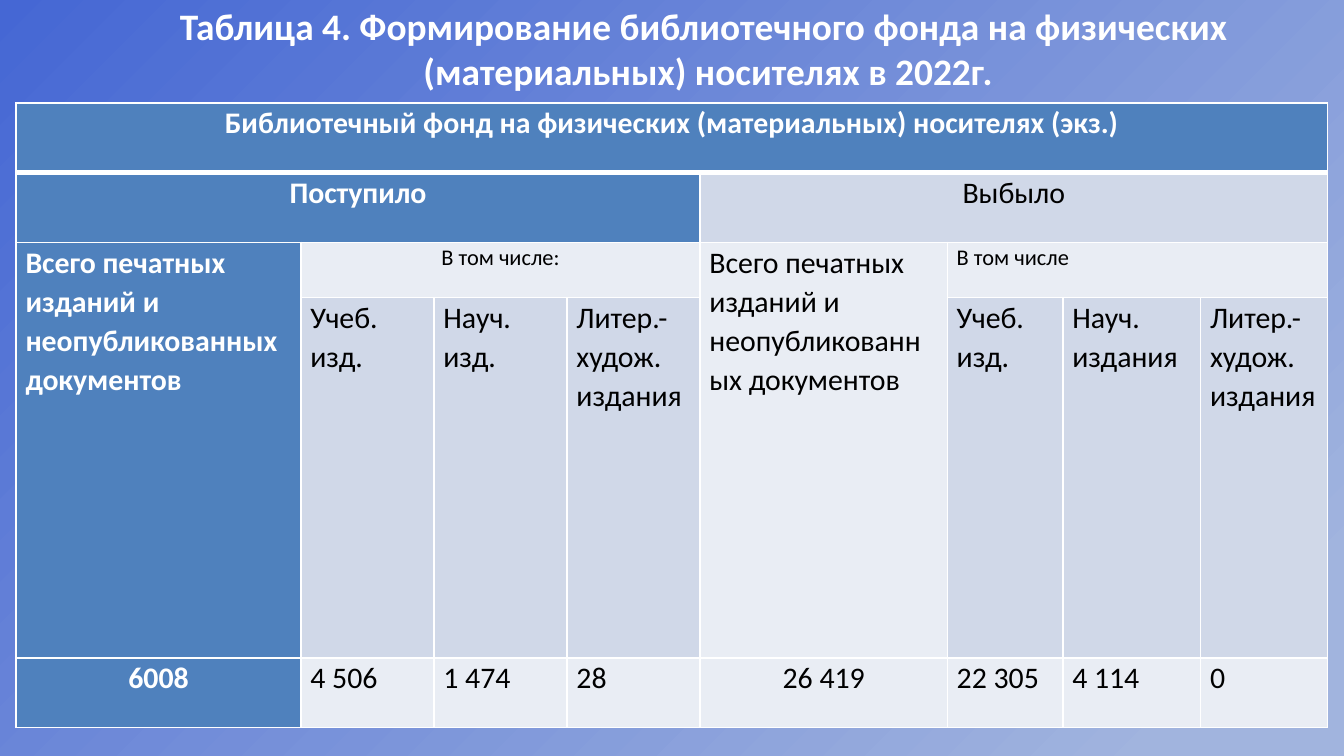
from typing import NamedTuple

from lxml.etree import SubElement
from pptx import Presentation
from pptx.dml.color import RGBColor
from pptx.enum.text import MSO_ANCHOR, PP_ALIGN
from pptx.oxml.ns import qn
from pptx.util import Emu, Pt

PX = 4572  # 200 px to the inch
FONT = "Calibri"
COLORS = {
    "white": "FFFFFF", "black": "000000", "head": "4F81BD",
    "dark": "D0D8E8", "light": "E9EDF4",
    "bg_start": "4567D4", "bg_end": "A1B4DE",
}
COLS = [424, 198, 198, 198, 368, 172, 205, 189]
ROWS = [104, 104, 82, 536, 104]
TITLE = ["Таблица 4. Формирование библиотечного фонда на физических ",
         "(материальных) носителях в 2022г."]
TOTAL = "Всего печатных изданий и неопубликованных документов"


class CellSpec(NamedTuple):
    row: int
    col: int
    text: str
    fill: str
    rows: int = 1
    cols: int = 1
    center: bool = False
    size: int = 16


HEADERS = [
    CellSpec(0, 0, "Библиотечный фонд на физических (материальных) носителях (экз.)",
             "head", cols=8, center=True),
    CellSpec(1, 0, "Поступило", "head", cols=4, center=True),
    CellSpec(1, 4, "Выбыло", "dark", cols=4, center=True),
    CellSpec(2, 0, TOTAL, "head", rows=2),
    CellSpec(2, 1, "В том числе:", "light", cols=3, center=True, size=12),
    CellSpec(2, 4, TOTAL, "light", rows=2),
    CellSpec(2, 5, "В том числе", "light", cols=3, size=12),
]
KINDS = {1: "Учеб. изд.", 2: "Науч. изд.", 3: "Литер.-худож. издания",
         5: "Учеб. изд.", 6: "Науч. издания", 7: "Литер.-худож. издания"}
VALUES = ["6008", "4 506", "1 474", "28", "26 419", "22 305", "4 114", "0"]


def px(n: int) -> Emu:
    return Emu(n * PX)


def rgb(name: str) -> RGBColor:
    return RGBColor.from_string(COLORS[name])


def style_paragraph(p, size: int, color: str, bold: bool, center: bool) -> None:
    p.alignment = PP_ALIGN.CENTER if center else PP_ALIGN.LEFT
    for r in p.runs:
        r.font.name, r.font.size, r.font.bold = FONT, Pt(size), bold
        r.font.color.rgb = rgb(color)


def set_borders(cell, row: int) -> None:
    """White lines, with a thick one under the first row."""
    tc_pr = cell._tc.get_or_add_tcPr()
    widths = {"lnL": 1, "lnR": 1, "lnT": 3 if row == 1 else 1, "lnB": 3 if row == 0 else 1}
    for tag, width in widths.items():
        ln = SubElement(tc_pr, qn(f"a:{tag}"), w=str(Pt(width)))
        fill = SubElement(ln, qn("a:solidFill"))
        SubElement(fill, qn("a:srgbClr"), val=COLORS["white"])


def draw_cell(table, spec: CellSpec) -> None:
    cell = table.cell(spec.row, spec.col)
    last_row, last_col = spec.row + spec.rows, spec.col + spec.cols
    if spec.rows * spec.cols > 1:
        cell.merge(table.cell(last_row - 1, last_col - 1))
    for row in range(spec.row, last_row):
        for col in range(spec.col, last_col):
            part = table.cell(row, col)
            set_borders(part, row)
            part.fill.solid()
            part.fill.fore_color.rgb = rgb(spec.fill)
    cell.margin_left = cell.margin_right = px(14)
    cell.margin_top = cell.margin_bottom = 0
    cell.text_frame.text = spec.text
    p = cell.text_frame.paragraphs[0]
    p.line_spacing = 1.07
    head = spec.fill == "head"
    style_paragraph(p, spec.size, "white" if head else "black", head, spec.center)


def draw_table(slide) -> None:
    table = slide.shapes.add_table(len(ROWS), len(COLS), px(24), px(153),
                                   px(sum(COLS)), px(sum(ROWS))).table
    table.first_row = table.horz_banding = False
    for col, width in zip(table.columns, COLS):
        col.width = px(width)
    for row, height in zip(table.rows, ROWS):
        row.height = px(height)
    kinds = [CellSpec(3, col, text, "dark") for col, text in KINDS.items()]
    values = [CellSpec(4, col, text, "light" if col else "head", center=col in (0, 4))
              for col, text in enumerate(VALUES)]
    for spec in HEADERS + kinds + values:
        draw_cell(table, spec)


def draw_title(slide) -> None:
    tf = slide.shapes.add_textbox(px(242), px(-5), px(1624), px(222)).text_frame
    tf.word_wrap = False
    tf.vertical_anchor = MSO_ANCHOR.TOP
    tf.text = "\n".join(TITLE)
    for p in tf.paragraphs:
        style_paragraph(p, 20, "white", True, True)


def draw_background(slide) -> None:
    fill = slide.background.fill
    fill.gradient()
    fill.gradient_angle = 315
    stops = [("bg_start", 0), ("bg_end", 0.91)]
    for stop, (color, position) in zip(fill.gradient_stops, stops):
        stop.color.rgb = rgb(color)
        stop.position = position


def main() -> None:
    prs = Presentation()
    prs.slide_width, prs.slide_height = px(2000), px(1125)
    slide = prs.slides.add_slide(prs.slide_layouts[6])
    draw_background(slide)
    draw_table(slide)
    draw_title(slide)
    prs.save("out.pptx")


if __name__ == "__main__":
    main()
